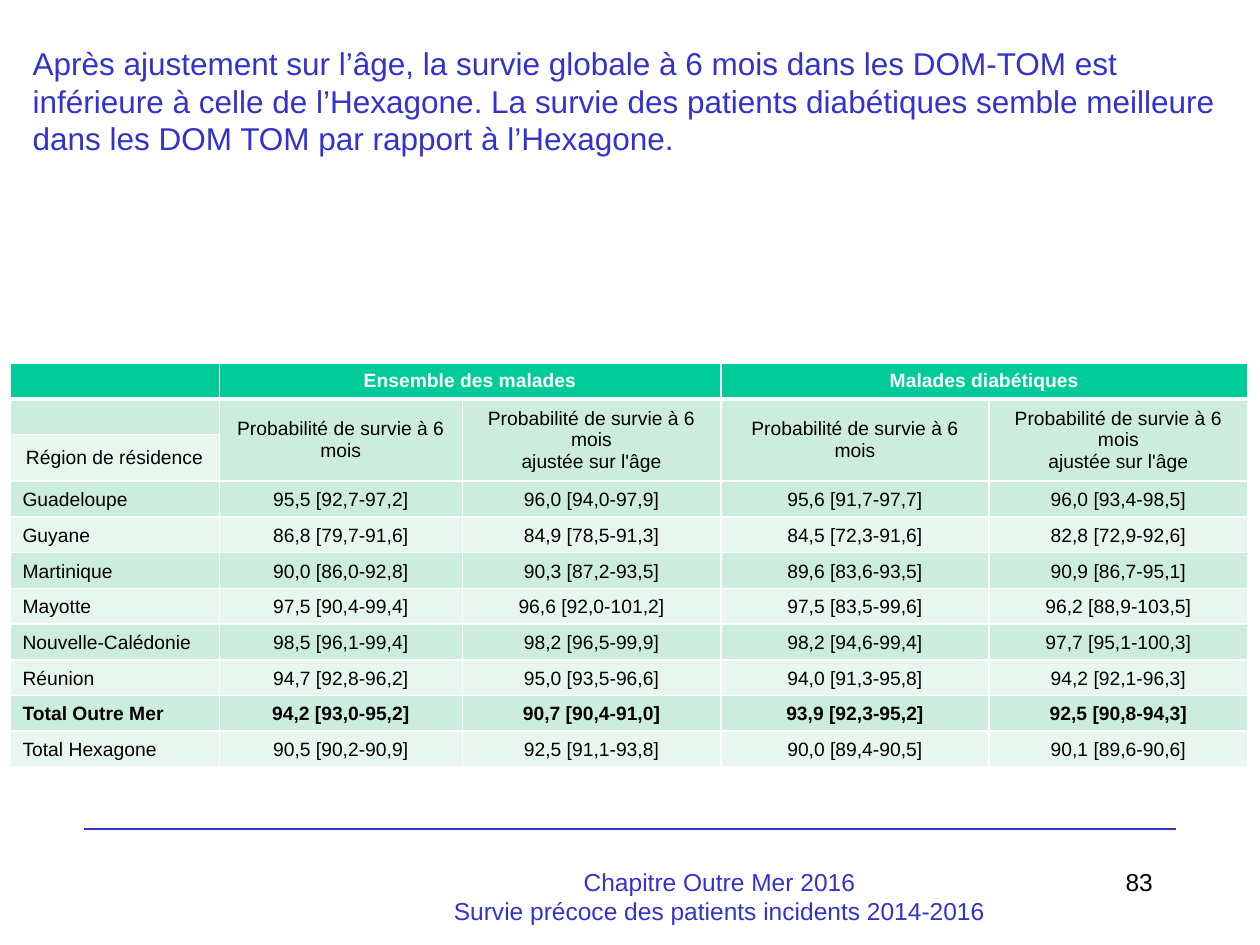
from dataclasses import dataclass

from lxml import etree
from pptx import Presentation
from pptx.dml.color import RGBColor
from pptx.enum import shapes, text
from pptx.oxml.ns import qn
from pptx.util import Cm, Pt

HUES = {"blue": "3333CC", "black": "000000", "white": "FFFFFF",
        "head": "00CC99", "dark": "CCECDE", "light": "E7F6EF"}
LEFT, MID, RIGHT = text.PP_ALIGN.LEFT, text.PP_ALIGN.CENTER, text.PP_ALIGN.RIGHT


@dataclass
class Note:
    left: float
    top: float
    width: float
    height: float
    lines: list[str]
    size: int
    hue: str
    align: text.PP_ALIGN


NOTES = [
    Note(18.21, 17.35, 5.28, 1.27, ["83"], 14, "black", RIGHT),
    Note(0.41, 0.76, 24.69, 2.57, [
        "Après ajustement sur l’âge, la survie globale à 6 mois dans les DOM-TOM est "
        "inférieure à celle de l’Hexagone. La survie des patients diabétiques semble "
        "meilleure dans les DOM TOM par rapport à l’Hexagone."], 18, "blue", LEFT),
    Note(8.69, 17.35, 11.63, 1.27, [
        "Chapitre Outre Mer 2016",
        "Survie précoce des patients incidents 2014-2016"], 14, "blue", MID),
]

RAW = "Probabilité de survie à 6 mois"
ADJ = RAW + "\najustée sur l'âge"
TOTAL = "Total Outre Mer"
ROWS = [
    ["", "Ensemble des malades", "", "Malades diabétiques", ""],
    ["", RAW, ADJ, RAW, ADJ],
    ["Région de résidence", "", "", "", ""],
    ["Guadeloupe", "95,5 [92,7-97,2]", "96,0 [94,0-97,9]", "95,6 [91,7-97,7]", "96,0 [93,4-98,5]"],
    ["Guyane", "86,8 [79,7-91,6]", "84,9 [78,5-91,3]", "84,5 [72,3-91,6]", "82,8 [72,9-92,6]"],
    ["Martinique", "90,0 [86,0-92,8]", "90,3 [87,2-93,5]", "89,6 [83,6-93,5]", "90,9 [86,7-95,1]"],
    ["Mayotte", "97,5 [90,4-99,4]", "96,6 [92,0-101,2]", "97,5 [83,5-99,6]", "96,2 [88,9-103,5]"],
    ["Nouvelle-Calédonie", "98,5 [96,1-99,4]", "98,2 [96,5-99,9]", "98,2 [94,6-99,4]", "97,7 [95,1-100,3]"],
    ["Réunion", "94,7 [92,8-96,2]", "95,0 [93,5-96,6]", "94,0 [91,3-95,8]", "94,2 [92,1-96,3]"],
    [TOTAL, "94,2 [93,0-95,2]", "90,7 [90,4-91,0]", "93,9 [92,3-95,2]", "92,5 [90,8-94,3]"],
    ["Total Hexagone", "90,5 [90,2-90,9]", "92,5 [91,1-93,8]", "90,0 [89,4-90,5]", "90,1 [89,6-90,6]"],
]
WIDTHS = [4.22, 4.9, 5.21, 5.41, 5.21]
HIGH = 0.72
HEADS = 3  # heading rows above the regions


def color(name: str) -> RGBColor:
    return RGBColor.from_string(HUES[name])


def style(para, size: int, hue: str, align, bold: bool = False) -> None:
    para.alignment = align
    font = para.font
    font.name, font.size, font.bold = "Arial", Pt(size), bold
    font.color.rgb = color(hue)


def write(slide, note: Note) -> None:
    box = slide.shapes.add_textbox(
        Cm(note.left), Cm(note.top), Cm(note.width), Cm(note.height))
    frame = box.text_frame
    frame.word_wrap = True
    frame.text = "\n".join(note.lines)
    for para in frame.paragraphs:
        style(para, note.size, note.hue, note.align)


def border(cell, base: float) -> None:
    """Draw white cell edges; they must come before the fill."""
    props = cell._tc.get_or_add_tcPr()
    for spot, (tag, wide) in enumerate(
            [("a:lnL", 1), ("a:lnR", 1), ("a:lnT", 1), ("a:lnB", base)]):
        line = etree.Element(qn(tag), w=str(Pt(wide)))
        fill = etree.SubElement(line, qn("a:solidFill"))
        etree.SubElement(fill, qn("a:srgbClr"), val=HUES["white"])
        props.insert(spot, line)


def fill_cell(cell, words: str, row: int, col: int) -> None:
    top, data = row == 0, row >= HEADS
    cell.text = words
    cell.vertical_anchor = text.MSO_ANCHOR.BOTTOM if data else text.MSO_ANCHOR.MIDDLE
    for para in cell.text_frame.paragraphs:
        style(para, 11, "white" if top else "black",
              LEFT if data and col == 0 else MID, top or ROWS[row][0] == TOTAL)
        if not words:  # keeps an empty row low
            etree.SubElement(para._p, qn("a:endParaRPr"), sz="1100")
    cell.fill.solid()
    cell.fill.fore_color.rgb = color("head" if top else "dark" if row % 2 else "light")
    border(cell, 3 if top else 1)


def draw_table(slide) -> None:
    table = slide.shapes.add_table(
        len(ROWS), len(WIDTHS), Cm(0.2), Cm(7.32),
        Cm(sum(WIDTHS)), Cm(HIGH * len(ROWS))).table
    for col, wide in zip(table.columns, WIDTHS):
        col.width = Cm(wide)
    for row in table.rows:
        row.height = Cm(HIGH)
    table.rows[2].height = Cm(0.94)
    for row, line in enumerate(ROWS):
        for col, words in enumerate(line):
            fill_cell(table.cell(row, col), words, row, col)
    # Group headings span columns, measure headings span rows
    for col in (1, 3):
        table.cell(0, col).merge(table.cell(0, col + 1))
    for col in range(1, len(WIDTHS)):
        table.cell(1, col).merge(table.cell(2, col))


def draw_rule(slide) -> None:
    rule = slide.shapes.add_connector(
        shapes.MSO_CONNECTOR.STRAIGHT, Cm(1.7), Cm(16.71), Cm(23.7), Cm(16.71))
    rule.line.color.rgb = color("blue")
    rule.line.width = Pt(1)
    etree.SubElement(rule._element.spPr, qn("a:effectLst"))


def main() -> None:
    deck = Presentation()
    deck.slide_width, deck.slide_height = Cm(25.4), Cm(19.05)
    slide = deck.slides.add_slide(deck.slide_layouts[6])
    # Footer rule, survival table, then texts
    draw_rule(slide)
    draw_table(slide)
    for note in NOTES:
        write(slide, note)
    deck.save("out.pptx")


if __name__ == "__main__":
    main()
